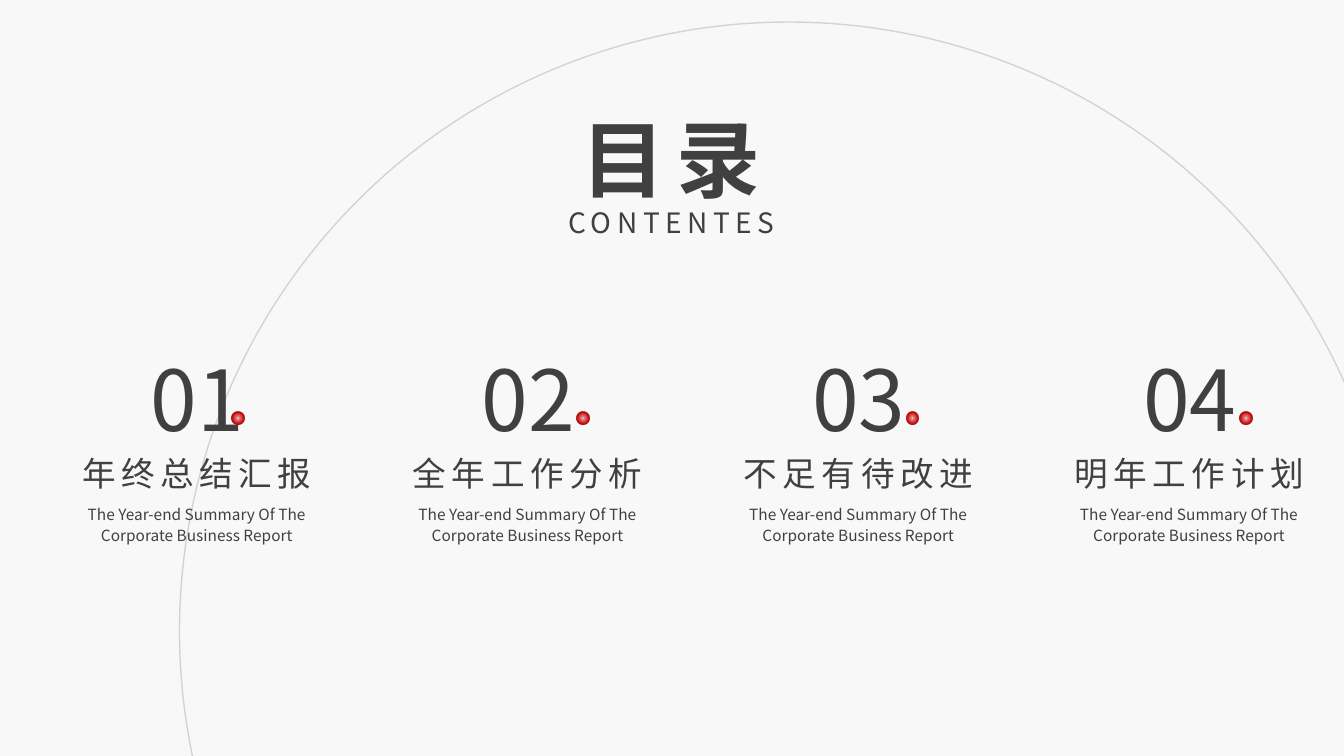
from lxml.etree import SubElement as Sub
from pptx import Presentation
from pptx.dml.color import RGBColor as Rgb
from pptx.enum.shapes import MSO_SHAPE as Geo
from pptx.enum.text import MSO_AUTO_SIZE as Fit, PP_ALIGN as Align
from pptx.oxml import parse_xml
from pptx.oxml.ns import nsdecls, qn
from pptx.util import Pt

PX = 9525
FONT = "Noto Sans CJK SC"
HUES = {"back": "F8F8F8", "text": "404040", "ring": "606060", "glow": "F6F8FC", "red": "C00000"}
STOPS = [(0, "glow", 100), (23, "red", 55), (63, "red", 100), (100, "red", 100)]
NOTE = "The Year-end Summary Of The Corporate Business Report"
ITEMS = [("年终总结汇报", 181), ("全年工作分析", 194), ("不足有待改进", 193), ("明年工作计划", 196)]


def hue(name):
    """Return a named colour."""
    return Rgb.from_string(HUES[name])


def write(slide, box, text, size, gap=0, bold=False, lead=None):
    """Place one centred line of text in a box."""
    frame = slide.shapes.add_textbox(*[n * PX for n in box]).text_frame
    frame.word_wrap = True
    frame.auto_size = Fit.SHAPE_TO_FIT_TEXT
    para = frame.paragraphs[0]
    para.alignment = Align.CENTER
    if lead:
        para.line_spacing = Pt(lead)
    run = para.add_run()
    run.text = text
    font = run.font
    font.size, font.bold, font.name = Pt(size), bold, FONT
    font.color.rgb = hue("text")
    props = run._r.get_or_add_rPr()
    if gap:
        props.set("spc", str(gap * 100))
    Sub(props, qn("a:ea")).set("typeface", FONT)


def oval(slide, box):
    """Place a plain ellipse without shadow."""
    shape = slide.shapes.add_shape(Geo.OVAL, *[n * PX for n in box])
    shape.shadow.inherit = False
    return shape


def ring(slide, box):
    """Draw the large faint circle."""
    shape = oval(slide, box)
    shape.fill.background()
    shape.line.width = Pt(1)
    shape.line.color.rgb = hue("ring")
    tint = shape.line._ln.find(".//" + qn("a:srgbClr"))
    Sub(tint, qn("a:alpha")).set("val", "23000")


def dot(slide, box):
    """Draw a red dot with a glowing centre."""
    shape = oval(slide, box)
    shape.line.fill.background()
    stops = "".join(
        f'<a:gs pos="{pos * 1000}"><a:srgbClr val="{HUES[name]}">'
        f'<a:alpha val="{alpha * 1000}"/></a:srgbClr></a:gs>'
        for pos, name, alpha in STOPS)
    grad = parse_xml(
        f'<a:gradFill {nsdecls("a")} rotWithShape="1"><a:gsLst>{stops}</a:gsLst>'
        '<a:path path="circle"><a:fillToRect l="50000" t="50000" r="50000" b="50000"/>'
        '</a:path></a:gradFill>')
    shape._element.spPr.find(qn("a:prstGeom")).addnext(grad)


def head(slide, box):
    """Write the title and its subtitle."""
    x, y, w, h = box
    write(slide, (x, y + 93, w, 42), "CONTENTES", 20, gap=4)
    write(slide, (x + 43, y, w - 86, 107), "目录", 60, gap=8, bold=True)


def item(slide, box, num, title, shift):
    """Write one numbered entry with its dot."""
    x, y, w, h = box
    write(slide, (x + 53, y, w - 105, 107), f"{num:02}", 60)
    write(slide, (x, y + 101, w, 48), title, 24, gap=4)
    write(slide, (x + 34, y + 148, w - 68, 69), NOTE, 11, lead=15)
    dot(slide, (x + shift, y + 66, 12, 12))


def main():
    """Build and save the contents slide."""
    deck = Presentation()
    deck.slide_width, deck.slide_height = 1280 * PX, 720 * PX
    slide = deck.slides.add_slide(deck.slide_layouts[6])
    fill = slide.background.fill
    fill.solid()
    fill.fore_color.rgb = hue("back")
    ring(slide, (171, 21, 1160, 1160))
    head(slide, (448, 98, 383, 135))
    for i, (title, shift) in enumerate(ITEMS):
        item(slide, (40 + 315 * i, 326, 295, 217), i + 1, title, shift)
    deck.save("out.pptx")


if __name__ == "__main__":
    main()
